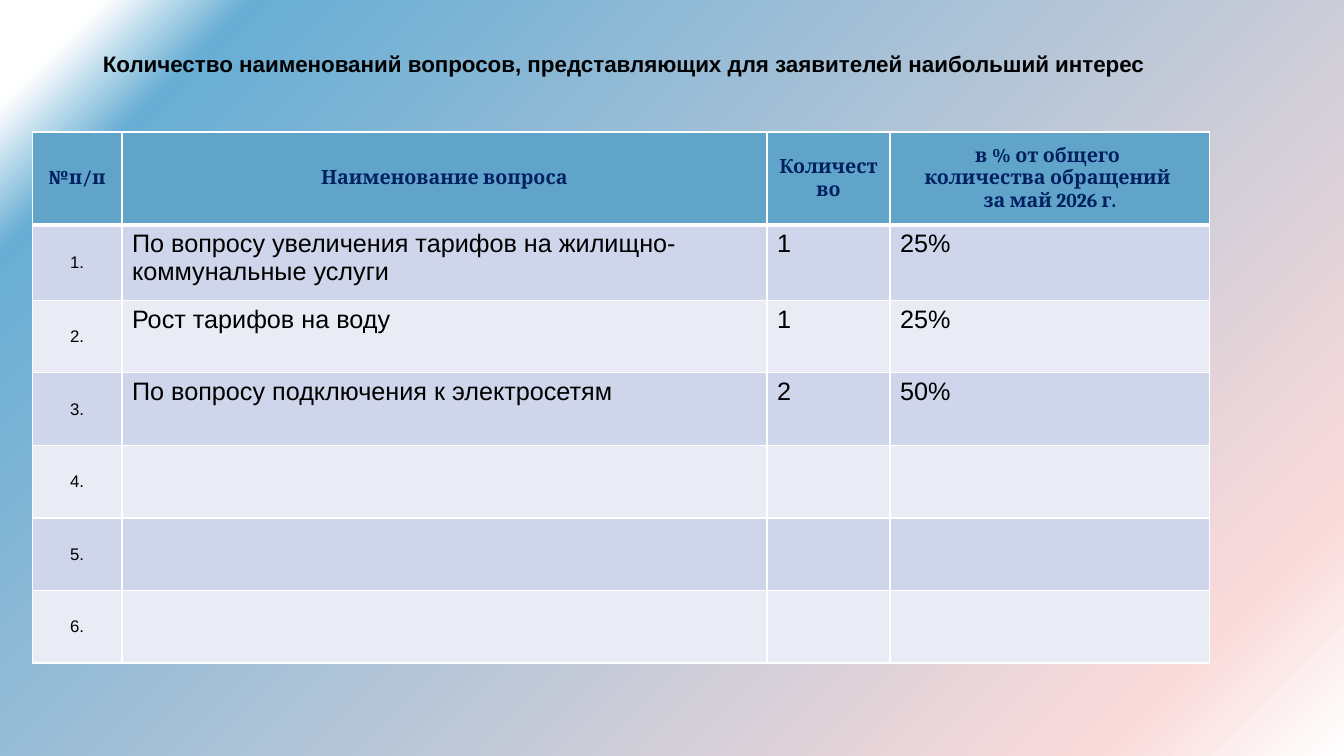
from dataclasses import dataclass

from lxml import etree
from pptx import Presentation
from pptx.dml.color import RGBColor
from pptx.enum.text import MSO_ANCHOR, PP_ALIGN
from pptx.oxml.ns import qn
from pptx.util import Inches, Pt

MIDDLE, TOP = MSO_ANCHOR.MIDDLE, MSO_ANCHOR.TOP
CENTER, LEFT = PP_ALIGN.CENTER, PP_ALIGN.LEFT
TITLE_ONLY = 5
GRID_COLUMNS, GRID_ROWS = 160, 90
PAGE_WIDTH, PAGE_HEIGHT = Inches(13.33), Inches(7.5)


@dataclass(frozen=True)
class Theme:
    body_font: str = "Arial"
    header_font: str = "Cambria"
    ink: str = "000000"
    header_ink: str = "002060"
    header_fill: str = "60A4C9"
    bands: tuple = ("CFD5EA", "E9EBF5")
    border: str = "FFFFFF"
    thin: int = 1
    thick: int = 3
    title_size: int = 16
    header_size: int = 14
    number_size: int = 12
    body_size: int = 18
    backdrop: tuple = ((5, "FFFFFF"), (12, "68AED4"), (88, "FADADA"), (100, "FFFFFF"))
    backdrop_opacity: int = 88
    backdrop_angle: int = 45


THEME = Theme()
TITLE = "Количество наименований вопросов, представляющих для заявителей наибольший интерес"
HEADERS = (
    "№п/п",
    "Наименование вопроса",
    "Количество",
    "в % от общего \nколичества обращений \nза май 2026 г.",
)
QUESTIONS = (
    ("По вопросу увеличения тарифов на жилищно-коммунальные услуги", "1", "25%"),
    ("Рост тарифов на воду", "1", "25%"),
    ("По вопросу подключения к электросетям", "2", "50%"),
) + (("", "", ""),) * 3
COLUMN_WIDTHS = (10.68, 76.8, 14.64, 38.04)
ROW_HEIGHTS = (11.04, 9) + (8.64,) * 5


def across(columns):
    return round(PAGE_WIDTH * columns / GRID_COLUMNS)


def down(rows):
    return round(PAGE_HEIGHT * rows / GRID_ROWS)


def write_text(frame, text, size=THEME.body_size, font=THEME.body_font,
               color=THEME.ink, bold=False, align=LEFT, spacing=None):
    frame.text = text
    for para in frame.paragraphs:
        para.alignment = align
        para.line_spacing = spacing
        for style in [para.font] + [span.font for span in para.runs]:
            style.size, style.name, style.bold = Pt(size), font, bold
            style.color.rgb = RGBColor.from_string(color)


def add_color(parent, color):
    return etree.SubElement(parent, qn("a:srgbClr"), val=color)


def paint_backdrop(page):
    page.background.fill.gradient()
    gradient = next(page.element.iter(qn("a:gradFill")))
    stops = gradient.find(qn("a:gsLst"))
    for stop in list(stops):
        stops.remove(stop)
    for position, color in THEME.backdrop:
        stop = etree.SubElement(stops, qn("a:gs"), pos=str(position * 1000))
        etree.SubElement(add_color(stop, color), qn("a:alpha"),
                         val=str(THEME.backdrop_opacity * 1000))
    gradient.find(qn("a:lin")).set("ang", str(THEME.backdrop_angle * 60000))


def set_borders(cell, top, bottom):
    properties = cell._tc.get_or_add_tcPr()
    sides = (("L", THEME.thin), ("R", THEME.thin), ("T", top), ("B", bottom))
    for index, (side, width) in enumerate(sides):
        line = etree.Element(qn(f"a:ln{side}"), w=str(Pt(width)))
        add_color(etree.SubElement(line, qn("a:solidFill")), THEME.border)
        properties.insert(index, line)


def fill_cell(cell, text, fill, anchor=TOP, top=THEME.thin, bottom=THEME.thin, **style):
    write_text(cell.text_frame, text, **style)
    cell.vertical_anchor = anchor
    cell.fill.solid()
    cell.fill.fore_color.rgb = RGBColor.from_string(fill)
    set_borders(cell, top, bottom)


def add_title(page):
    title = page.shapes.title
    title.left, title.top = across(11.04), down(3.24)
    title.width, title.height = across(138), down(9)
    title.text_frame.word_wrap = True
    title.text_frame.vertical_anchor = MIDDLE
    write_text(title.text_frame, TITLE, size=THEME.title_size, bold=True, spacing=0.9)


def add_question_table(page):
    table = page.shapes.add_table(
        len(ROW_HEIGHTS), len(COLUMN_WIDTHS), across(3.84), down(15.72),
        across(sum(COLUMN_WIDTHS)), down(sum(ROW_HEIGHTS))).table
    for column, width in zip(table.columns, COLUMN_WIDTHS):
        column.width = across(width)
    for row, height in zip(table.rows, ROW_HEIGHTS):
        row.height = down(height)
    for column, text in enumerate(HEADERS):
        fill_cell(table.cell(0, column), text, THEME.header_fill, anchor=MIDDLE,
                  bottom=THEME.thick, size=THEME.header_size, font=THEME.header_font,
                  color=THEME.header_ink, bold=True, align=CENTER)
    for number, question in enumerate(QUESTIONS, start=1):
        fill = THEME.bands[(number - 1) % 2]
        top = THEME.thick if number == 1 else THEME.thin
        fill_cell(table.cell(number, 0), f"{number}.", fill, anchor=MIDDLE, top=top,
                  size=THEME.number_size, align=CENTER)
        for column, text in enumerate(question, start=1):
            fill_cell(table.cell(number, column), text, fill, top=top)


def main():
    deck = Presentation()
    deck.slide_width, deck.slide_height = PAGE_WIDTH, PAGE_HEIGHT
    page = deck.slides.add_slide(deck.slide_layouts[TITLE_ONLY])
    paint_backdrop(page)
    add_title(page)
    add_question_table(page)
    deck.save("out.pptx")


if __name__ == "__main__":
    main()
